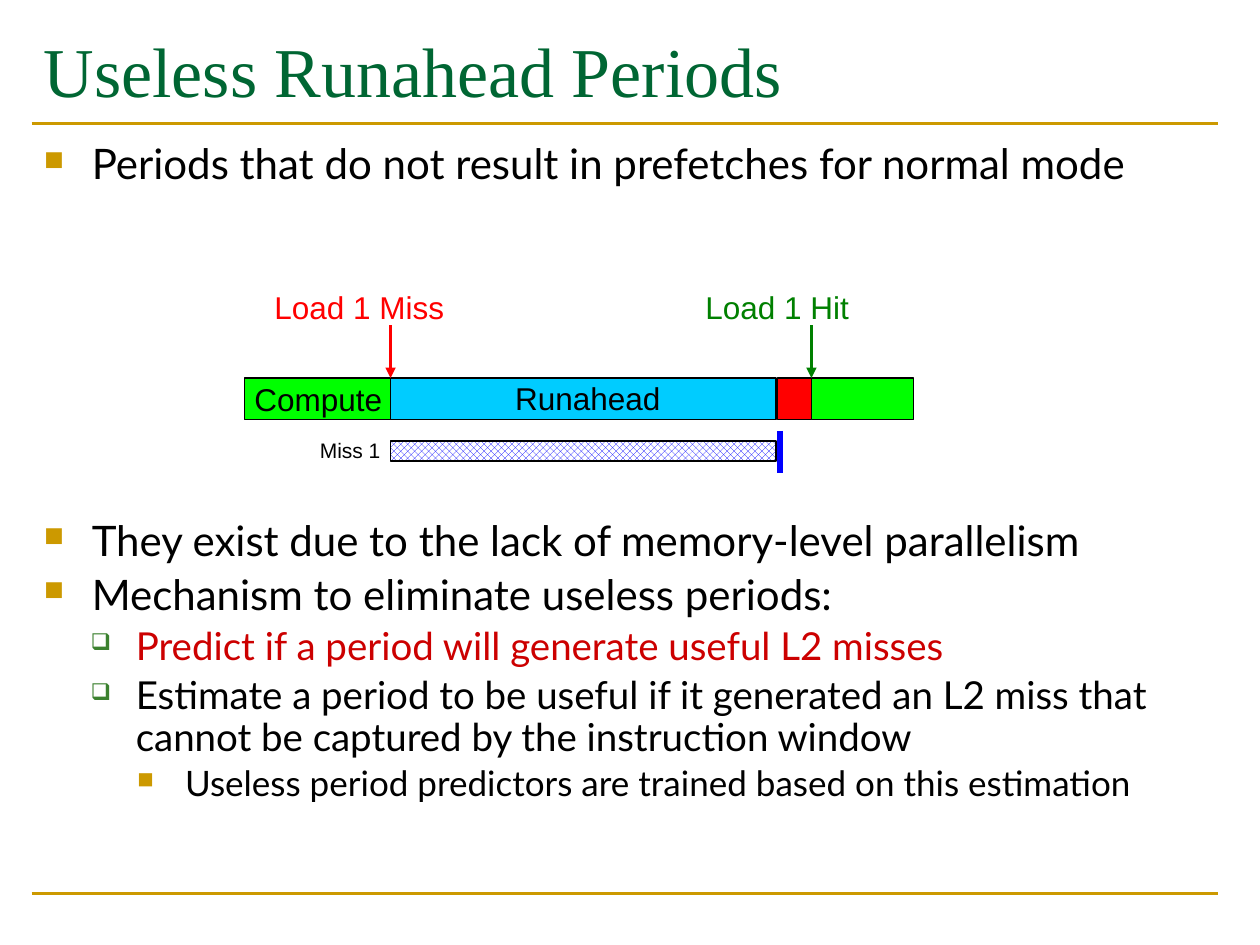
from typing import NamedTuple

from lxml import etree
from pptx import Presentation
from pptx import util as u
from pptx.dml.color import RGBColor
from pptx.enum import dml, shapes, text
from pptx.oxml import ns

COLORS = {
    "gold": "CC9900", "title": "006633", "black": "000000", "white": "FFFFFF",
    "accent": "CC0000", "bullet": "3B812F", "lime": "00FF00", "sky": "00CCFF",
    "red": "FF0000", "green": "008000", "blue": "0000FF",
}

BAR_TOP, BAR_HEIGHT = 3.0, 0.33
MISS_X, RETURN_X, HIT_X = 3.1, 6.17, 6.44


class Level(NamedTuple):
    margin: float
    hanging: float
    size: int
    bullet: str
    bullet_color: str
    bullet_percent: int


class Item(NamedTuple):
    wording: str
    level: int = 0
    color: str = "black"


class Segment(NamedTuple):
    left: float
    width: float
    color: str


class Label(NamedTuple):
    wording: str
    left: float
    top: float
    width: float
    height: float = 0.4
    size: int = 18
    color: str = "black"


class Stroke(NamedTuple):
    x1: float
    y1: float
    x2: float
    y2: float
    color: str
    weight: float
    arrow: bool = False


LEVELS = [
    Level(0.38, 0.38, 24, "■", "gold", 65),
    Level(0.73, 0.36, 22, "❑", "bullet", 60),
    Level(1.12, 0.38, 20, "■", "gold", 65),
]
DEFINITION = [Item("Periods that do not result in prefetches for normal mode")]
MECHANISM = [
    Item("They exist due to the lack of memory-level parallelism"),
    Item("Mechanism to eliminate useless periods:"),
    Item("Predict if a period will generate useful L2 misses", 1, "accent"),
    Item("Estimate a period to be useful if it generated an L2 miss that "
         "cannot be captured by the instruction window", 1),
    Item("Useless period predictors are trained based on this estimation", 2),
]
SEGMENTS = [
    Segment(1.94, 1.17, "lime"),
    Segment(MISS_X, 3.06, "sky"),
    Segment(RETURN_X, 0.27, "red"),
    Segment(HIT_X, 0.81, "lime"),
]
LABELS = [
    Label("Compute", 1.92, 2.97, 1.25),
    Label("Runahead", 3.99, 2.96, 1.4),
    Label("Load 1 Miss", 2.08, 2.24, 1.6, color="red"),
    Label("Load 1 Hit", 5.5, 2.24, 1.4, color="green"),
    Label("Miss 1", 2.44, 3.42, 0.72, 0.3, 12),
]
STROKES = [
    Stroke(0.25, 7.09, 9.67, 7.09, "gold", 1.5),
    Stroke(0.25, 0.98, 9.67, 0.98, "gold", 1.5),
    Stroke(MISS_X, 2.58, MISS_X, BAR_TOP, "red", 1.75, True),
    Stroke(HIT_X, 2.58, HIT_X, BAR_TOP, "green", 1.75, True),
    Stroke(6.19, 3.42, 6.19, 3.75, "blue", 3),
]


def rgb(name: str) -> RGBColor:
    return RGBColor.from_string(COLORS[name])


def style_runs(para, font: str, size: int, color: str) -> None:
    for span in para.runs:
        span.font.name = font
        span.font.size = u.Pt(size)
        span.font.color.rgb = rgb(color)


def add_box(page, left: float, top: float, width: float, height: float, wrap: bool = True):
    box = page.shapes.add_textbox(u.Inches(left), u.Inches(top), u.Inches(width), u.Inches(height))
    box.text_frame.word_wrap = wrap
    return box


def add_bullet(para, level: Level) -> None:
    """Give the paragraph its hanging indent and coloured bullet."""
    props = para._p.get_or_add_pPr()
    props.set("marL", str(u.Inches(level.margin)))
    props.set("indent", str(-u.Inches(level.hanging)))
    color = etree.SubElement(props, ns.qn("a:buClr"))
    etree.SubElement(color, ns.qn("a:srgbClr"), val=COLORS[level.bullet_color])
    etree.SubElement(props, ns.qn("a:buSzPct"), val=str(level.bullet_percent * 1000))
    etree.SubElement(props, ns.qn("a:buChar"), char=level.bullet)


def add_list(page, top: float, height: float, items: list[Item]) -> None:
    frame = add_box(page, 0.25, top, 9.42, height).text_frame
    frame.text = "\n".join(item.wording for item in items)
    for index, (para, item) in enumerate(zip(frame.paragraphs, items)):
        level = LEVELS[item.level]
        para.level = item.level
        para.line_spacing = 0.9
        para.space_before = u.Pt(0.2 * level.size if index else 0)
        add_bullet(para, level)
        style_runs(para, "Lato", level.size, item.color)


def add_title(page, wording: str) -> None:
    frame = add_box(page, 0.25, 0.17, 9.42, 0.75).text_frame
    frame.text = wording
    style_runs(frame.paragraphs[0], "Times New Roman", 40, "title")


def add_label(page, label: Label) -> None:
    frame = add_box(page, label.left, label.top, label.width, label.height, wrap=False).text_frame
    frame.auto_size = text.MSO_AUTO_SIZE.NONE
    frame.text = label.wording
    para = frame.paragraphs[0]
    para.alignment = text.PP_ALIGN.LEFT
    style_runs(para, "Arial", label.size, label.color)


def add_bar(page, left: float, top: float, width: float, height: float):
    bar = page.shapes.add_shape(
        shapes.MSO_SHAPE.RECTANGLE,
        u.Inches(left), u.Inches(top), u.Inches(width), u.Inches(height))
    bar.shadow.inherit = False
    bar.line.color.rgb = rgb("black")
    bar.line.width = u.Pt(0.75)
    return bar


def add_segment(page, segment: Segment) -> None:
    bar = add_bar(page, segment.left, BAR_TOP, segment.width, BAR_HEIGHT)
    bar.fill.solid()
    bar.fill.fore_color.rgb = rgb(segment.color)


def add_miss_bar(page) -> None:
    bar = add_bar(page, MISS_X, 3.5, 3.06, 0.16)
    bar.fill.patterned()
    bar.fill.pattern = dml.MSO_PATTERN.LARGE_CHECKER_BOARD
    bar.fill.fore_color.rgb = rgb("blue")
    bar.fill.back_color.rgb = rgb("white")


def add_stroke(page, stroke: Stroke) -> None:
    line = page.shapes.add_connector(
        shapes.MSO_CONNECTOR.STRAIGHT,
        u.Inches(stroke.x1), u.Inches(stroke.y1), u.Inches(stroke.x2), u.Inches(stroke.y2))
    line.line.color.rgb = rgb(stroke.color)
    line.line.width = u.Pt(stroke.weight)
    if stroke.arrow:
        etree.SubElement(line.line._get_or_add_ln(), ns.qn("a:tailEnd"), type="triangle")
    etree.SubElement(line._element.spPr, ns.qn("a:effectLst"))


def main() -> None:
    deck = Presentation()
    deck.slide_width, deck.slide_height = u.Inches(10), u.Inches(7.5)
    page = deck.slides.add_slide(deck.slide_layouts[6])
    add_title(page, "Useless Runahead Periods")
    add_list(page, 1.09, 0.5, DEFINITION)
    add_list(page, 4.08, 2.69, MECHANISM)
    for segment in SEGMENTS:
        add_segment(page, segment)
    add_miss_bar(page)
    for label in LABELS:
        add_label(page, label)
    for stroke in STROKES:
        add_stroke(page, stroke)
    deck.save("out.pptx")


if __name__ == "__main__":
    main()
